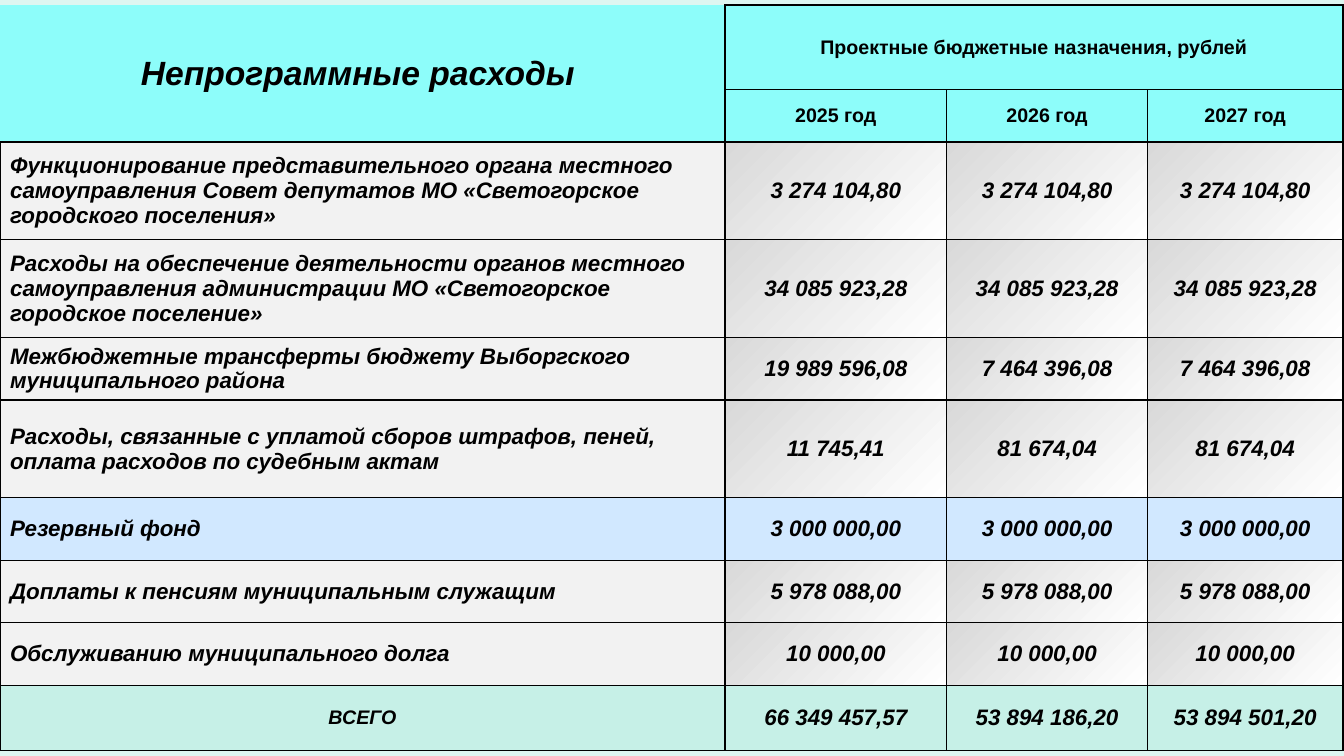
from dataclasses import dataclass

import pptx
import pptx.dml.color
import pptx.enum.text
import pptx.oxml
import pptx.oxml.ns
import pptx.util

Inches = pptx.util.Inches
CENTER = pptx.enum.text.PP_ALIGN.CENTER
LEFT = pptx.enum.text.PP_ALIGN.LEFT


@dataclass(frozen=True)
class Theme:
    font: str = "Arial"
    ink: str = "000000"
    background: str = "DEF6F1"
    header: str = "8DFDFA"
    label: str = "F2F2F2"
    reserve: str = "D1E8FF"
    total: str = "C6F0E7"
    shade: tuple = ("D9D9D9", "FFFFFF")
    title_size: int = 24
    body_size: int = 16
    small_size: int = 14


THEME = Theme()
COL_WIDTHS = (7.19, 2.2, 1.99, 1.94)
ROW_HEIGHTS = (0.84, 0.52, 0.97, 0.97, 0.62, 0.97, 0.62, 0.62, 0.62, 0.65)
YEARS = (2025, 2026, 2027)
RESERVE = "Резервный фонд"
EXPENSES = (
    ("Функционирование представительного органа местного самоуправления "
     "Совет депутатов МО «Светогорское городского поселения»",
     "3 274 104,80", "3 274 104,80", "3 274 104,80"),
    ("Расходы на обеспечение деятельности органов местного самоуправления "
     "администрации МО «Светогорское городское поселение»",
     "34 085 923,28", "34 085 923,28", "34 085 923,28"),
    ("Межбюджетные трансферты бюджету Выборгского муниципального района",
     "19 989 596,08", "7 464 396,08", "7 464 396,08"),
    ("Расходы, связанные с уплатой сборов штрафов, пеней, "
     "оплата расходов по судебным актам",
     "11 745,41", "81 674,04", "81 674,04"),
    (RESERVE, "3 000 000,00", "3 000 000,00", "3 000 000,00"),
    ("Доплаты к пенсиям муниципальным служащим",
     "5 978 088,00", "5 978 088,00", "5 978 088,00"),
    ("Обслуживанию муниципального долга",
     "10 000,00", "10 000,00", "10 000,00"),
)
TOTALS = ("66 349 457,57", "53 894 186,20", "53 894 501,20")


def rgb(color):
    return pptx.dml.color.RGBColor.from_string(color)


def set_borders(cell, sides="LRTB"):
    """Rule the given sides of a cell and leave the others without a line."""
    tc_pr = cell._tc.get_or_add_tcPr()
    for side in "LRTB":
        paint = (f'<a:solidFill><a:srgbClr val="{THEME.ink}"/></a:solidFill>'
                 if side in sides else "<a:noFill/>")
        tc_pr.append(pptx.oxml.parse_xml(
            f'<a:ln{side} {pptx.oxml.ns.nsdecls("a")} w="12700">{paint}</a:ln{side}>'))


def set_fill(cell, fill):
    """Fill with one colour, or with a diagonal gradient for a pair of colours."""
    if isinstance(fill, str):
        cell.fill.solid()
        cell.fill.fore_color.rgb = rgb(fill)
        return
    cell.fill.gradient()
    cell.fill.gradient_angle = 315
    for stop, color in zip(cell.fill.gradient_stops, fill):
        stop.color.rgb = rgb(color)


def write_cell(cell, text, fill, size=THEME.body_size, align=CENTER, italic=True):
    set_fill(cell, fill)
    cell.vertical_anchor = pptx.enum.text.MSO_ANCHOR.MIDDLE
    p = cell.text_frame.paragraphs[0]
    p.text = text
    p.alignment = align
    p.font.name = THEME.font
    p.font.size = pptx.util.Pt(size)
    p.font.bold = True
    p.font.italic = italic
    p.font.color.rgb = rgb(THEME.ink)


def add_grid(s):
    table = s.shapes.add_table(
        len(ROW_HEIGHTS), len(COL_WIDTHS), Inches(0), Inches(0.05),
        Inches(sum(COL_WIDTHS)), Inches(sum(ROW_HEIGHTS))).table
    table.first_row = table.horz_banding = False
    for column, width in zip(table.columns, COL_WIDTHS):
        column.width = Inches(width)
    for row, height in zip(table.rows, ROW_HEIGHTS):
        row.height = Inches(height)
    for i, row in enumerate(table.rows):
        for j, cell in enumerate(row.cells):
            set_borders(cell, "RB" if i < 2 and j == 0 else "LRTB")
    return table


def fill_header(table):
    table.cell(0, 0).merge(table.cell(1, 0))
    table.cell(0, 1).merge(table.cell(0, len(YEARS)))
    write_cell(table.cell(0, 0), "Непрограммные расходы ", THEME.header,
               THEME.title_size)
    write_cell(table.cell(0, 1), "Проектные бюджетные назначения, рублей",
               THEME.header, THEME.small_size, italic=False)
    for j, year in enumerate(YEARS, 1):
        write_cell(table.cell(1, j), f"{year} год", THEME.header,
                   THEME.small_size, italic=False)


def fill_expenses(table):
    for i, (label, *amounts) in enumerate(EXPENSES, 2):
        is_reserve = label == RESERVE
        write_cell(table.cell(i, 0), label,
                   THEME.reserve if is_reserve else THEME.label, align=LEFT)
        for j, amount in enumerate(amounts, 1):
            write_cell(table.cell(i, j), amount,
                       THEME.reserve if is_reserve else THEME.shade)


def fill_totals(table):
    last = len(ROW_HEIGHTS) - 1
    write_cell(table.cell(last, 0), "ВСЕГО", THEME.total, THEME.small_size)
    for j, amount in enumerate(TOTALS, 1):
        write_cell(table.cell(last, j), amount, THEME.total)


def main():
    prs = pptx.Presentation()
    prs.slide_width, prs.slide_height = Inches(13.33), Inches(7.5)
    s = prs.slides.add_slide(prs.slide_layouts[6])
    s.background.fill.solid()
    s.background.fill.fore_color.rgb = rgb(THEME.background)
    table = add_grid(s)
    fill_header(table)
    fill_expenses(table)
    fill_totals(table)
    prs.save("out.pptx")


if __name__ == "__main__":
    main()
